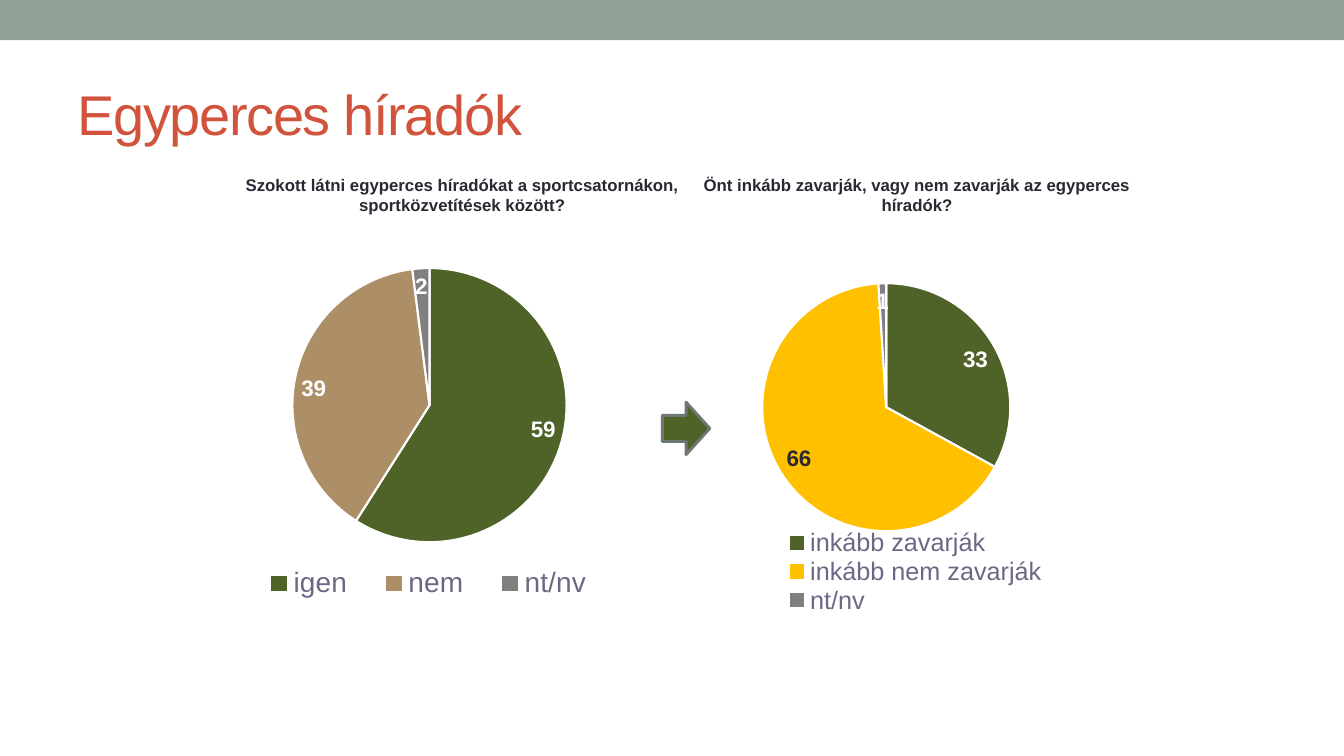
from lxml.etree import SubElement
from pptx import Presentation
from pptx.chart.data import CategoryChartData
from pptx.dml.color import RGBColor
from pptx.enum.chart import XL_CHART_TYPE, XL_LABEL_POSITION, XL_LEGEND_POSITION
from pptx.enum.shapes import MSO_SHAPE
from pptx.enum.text import MSO_ANCHOR, PP_ALIGN
from pptx.oxml.ns import qn
from pptx.util import Inches, Pt

GREEN, TAN, YELLOW, GRAY = "4F6228", "AD8F67", "FFC000", "808080"
DARK, WHITE = "292934", "FFFFFF"


def color(value):
    return RGBColor.from_string(value)


def lengths(box):
    return [Inches(value) for value in box]


def set_font(font, size, fill, bold=False):
    for name, value in {"name": "Arial", "size": Pt(size), "bold": bold}.items():
        setattr(font, name, value)
    font.color.rgb = color(fill)


def add_filled_shape(page, kind, box, fill, line=None, line_width=0):
    shape = page.shapes.add_shape(kind, *lengths(box))
    shape.shadow.inherit = False
    shape.fill.solid()
    shape.fill.fore_color.rgb = color(fill)
    if line:
        shape.line.color.rgb = color(line)
        shape.line.width = Pt(line_width)
    else:
        shape.line.fill.background()


def add_title(page, box, text):
    title = page.shapes.title
    title.left, title.top, title.width, title.height = lengths(box)
    title.text_frame.vertical_anchor = MSO_ANCHOR.MIDDLE
    para = title.text_frame.paragraphs[0]
    para.alignment = PP_ALIGN.LEFT
    span = para.add_run()
    span.text = text
    set_font(span.font, 40, "D2533C")
    span.font._element.set("spc", "-100")


def add_question(page, box, text):
    frame = page.shapes.add_textbox(*lengths(box)).text_frame
    frame.word_wrap = True
    para = frame.paragraphs[0]
    para.alignment = PP_ALIGN.CENTER
    span = para.add_run()
    span.text = text
    set_font(span.font, 12, DARK, True)


def place_part(parent, index, frame, box, inner=False):
    """Place a chart part at box, given in slide inches, inside the chart frame."""
    for old in parent.findall(qn("c:layout")):
        parent.remove(old)
    layout = SubElement(parent, qn("c:layout"))
    parent.insert(index, layout)
    manual = SubElement(layout, qn("c:manualLayout"))
    if inner:
        SubElement(manual, qn("c:layoutTarget")).set("val", "inner")
    for name in ("xMode", "yMode"):
        SubElement(manual, qn("c:" + name)).set("val", "edge")
    left, top, width, height = frame
    shares = {"x": (box[0] - left) / width, "y": (box[1] - top) / height,
              "w": box[2] / width, "h": box[3] / height}
    for name, share in shares.items():
        SubElement(manual, qn("c:" + name)).set("val", f"{share:.4f}")


def add_pie(page, frame, slices, pie_box, legend_box, legend_size):
    """Draw a pie of (category, value, fill, label color) slices."""
    data = CategoryChartData(number_format="0")
    data.categories = [item[0] for item in slices]
    data.add_series("Series 1", [item[1] for item in slices])
    chart = page.shapes.add_chart(XL_CHART_TYPE.PIE, *lengths(frame), data).chart
    set_font(chart.font, 10, DARK)
    chart.has_title = False

    chart.has_legend = True
    legend = chart.legend
    legend.position = XL_LEGEND_POSITION.BOTTOM
    legend.include_in_layout = False
    set_font(legend.font, legend_size, "696986")
    place_part(legend._element, 1, frame, legend_box)

    plot = chart.plots[0]
    plot.vary_by_categories = True
    place_part(chart._chartSpace.chart.plotArea, 0, frame, pie_box, inner=True)
    series = plot.series[0]
    labels = series.data_labels
    labels.show_value = True
    labels.number_format = "0"
    labels.number_format_is_linked = False
    labels.position = XL_LABEL_POSITION.INSIDE_END
    set_font(labels.font, 16, WHITE, True)
    for index, (_, _, fill, label_color) in enumerate(slices):
        point = series.points[index]
        point.format.fill.solid()
        point.format.fill.fore_color.rgb = color(fill)
        point.format.line.color.rgb = color(WHITE)
        point.format.line.width = Pt(1.5)
        if label_color != WHITE:
            set_font(point.data_label.font, 16, label_color, True)
            point.data_label.position = XL_LABEL_POSITION.INSIDE_END


def main():
    deck = Presentation()
    deck.slide_width, deck.slide_height = Inches(13.33), Inches(7.5)
    page = deck.slides.add_slide(deck.slide_layouts[5])
    add_filled_shape(page, MSO_SHAPE.RECTANGLE, (0, 0, 13.33, 0.4), "93A299")
    add_title(page, (0.67, 0.58, 12, 1.08), "Egyperces híradók")

    add_pie(page, (2.19, 2.43, 4.93, 3.76),
            [("igen", 59, GREEN, WHITE), ("nem", 39, TAN, WHITE),
             ("nt/nv", 2, GRAY, WHITE)],
            (2.9, 2.66, 2.72, 2.72), (2.4, 5.58, 3.7, 0.42), 20)
    add_question(page, (2.16, 1.68, 4.85, 0.5),
                 "Szokott látni egyperces híradókat a sportcsatornákon, "
                 "sportközvetítések között?")
    add_question(page, (6.67, 1.68, 4.85, 0.5),
                 "Önt inkább zavarják, vagy nem zavarják az egyperces híradók?")
    add_pie(page, (7.03, 2.57, 4.23, 3.54),
            [("inkább zavarják", 33, GREEN, WHITE),
             ("inkább nem zavarják", 66, YELLOW, DARK),
             ("nt/nv", 1, GRAY, WHITE)],
            (7.56, 2.81, 2.46, 2.46), (7.73, 5.24, 2.7, 0.86), 18)
    add_filled_shape(page, MSO_SHAPE.RIGHT_ARROW, (6.57, 3.99, 0.47, 0.52),
                     GREEN, "6D7871", 2.08)
    deck.save("out.pptx")


if __name__ == "__main__":
    main()
